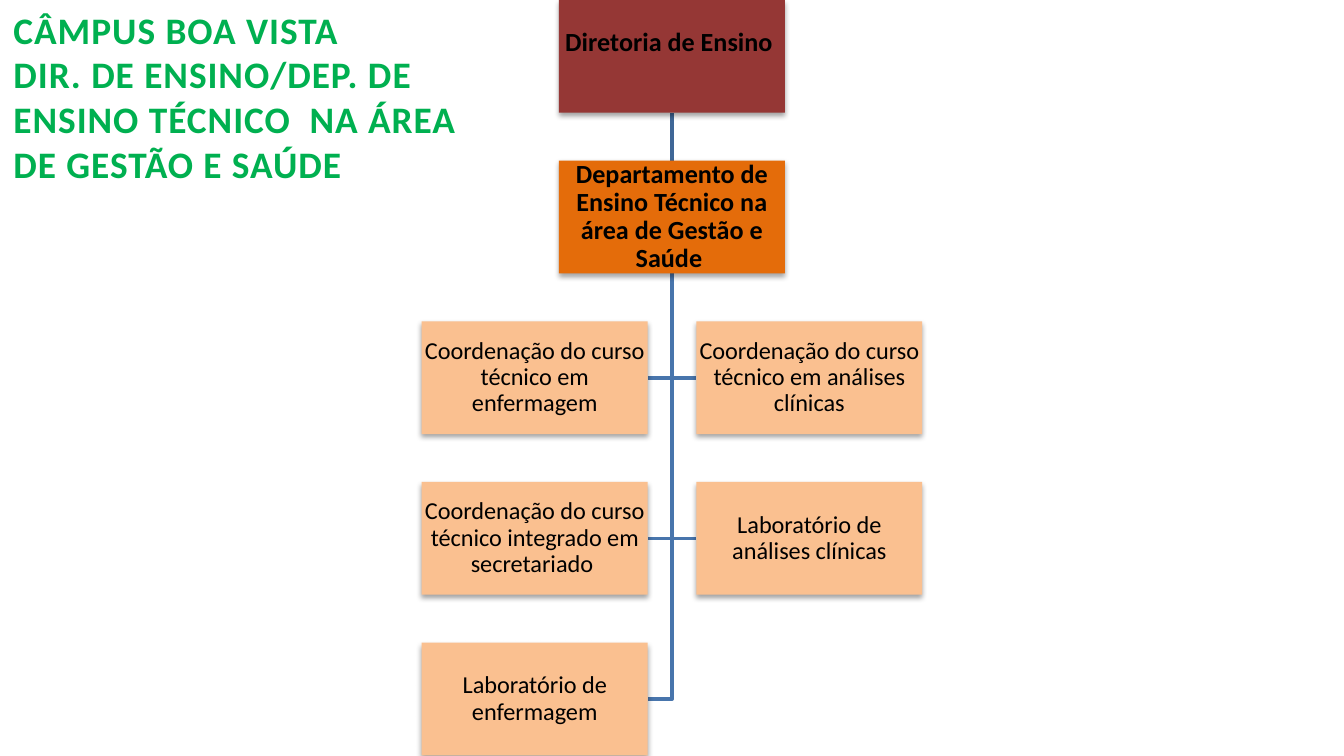
import pptx
import pptx.dml.color
import pptx.enum.shapes
import pptx.enum.text
import pptx.oxml
import pptx.oxml.ns
import pptx.util
from pptx.util import Cm

COLORS = {
    "heading": "00B050",
    "board": "953735",
    "department": "E46C0A",
    "unit": "FAC090",
    "text": "000000",
    "top_link": "3F6797",
    "link": "4875AC",
}
BOX_WIDTH, BOX_HEIGHT = 4.27, 2.13
ROW_STEP = 3.035
CENTER = 12.7
SIDE_GAP = 0.46


def rgb(name):
    return pptx.dml.color.RGBColor.from_string(COLORS[name])


def add_box(label, left, row, fill, size, bold):
    box = slide.shapes.add_shape(
        pptx.enum.shapes.MSO_SHAPE.RECTANGLE,
        Cm(left), Cm(row * ROW_STEP), Cm(BOX_WIDTH), Cm(BOX_HEIGHT))
    box.fill.solid()
    box.fill.fore_color.rgb = rgb(fill)
    box.line.fill.background()
    box.shadow.inherit = False
    effects = box._element.spPr.find(pptx.oxml.ns.qn("a:effectLst"))
    effects.append(pptx.oxml.parse_xml(
        f'<a:outerShdw {pptx.oxml.ns.nsdecls("a")} blurRad="39370" dist="21590" '
        'dir="5400000" rotWithShape="0"><a:srgbClr val="000000">'
        '<a:alpha val="37000"/></a:srgbClr></a:outerShdw>'))
    frame = box.text_frame
    frame.word_wrap = True
    frame.vertical_anchor = pptx.enum.text.MSO_ANCHOR.MIDDLE
    frame.margin_left = frame.margin_right = Cm(0.03)
    frame.margin_top = frame.margin_bottom = Cm(0.03)
    frame.text = label
    paragraph = frame.paragraphs[0]
    paragraph.alignment = pptx.enum.text.PP_ALIGN.CENTER
    paragraph.line_spacing = 0.9
    font = paragraph.runs[0].font
    font.name = "Calibri"
    font.size = pptx.util.Pt(size)
    font.bold = bold
    font.color.rgb = rgb("text")
    return box


deck = pptx.Presentation()
deck.slide_width, deck.slide_height = Cm(25.4), Cm(14.28)
slide = deck.slides.add_slide(deck.slide_layouts[5])

# Heading
heading = slide.shapes.title
heading.left, heading.top, heading.width, heading.height = Cm(0), Cm(0), Cm(9.5), Cm(3.68)
heading.text_frame.text = (
    "CÂMPUS BOA VISTA\n"
    "DIR. DE ENSINO/DEP. DE ENSINO TÉCNICO  NA ÁREA DE GESTÃO E SAÚDE")
heading.text_frame.word_wrap = True
heading.text_frame.auto_size = pptx.enum.text.MSO_AUTO_SIZE.NONE
heading.text_frame.vertical_anchor = pptx.enum.text.MSO_ANCHOR.TOP
for paragraph in heading.text_frame.paragraphs:
    paragraph.alignment = pptx.enum.text.PP_ALIGN.LEFT
    font = paragraph.runs[0].font
    font.name = "Calibri"
    font.size = pptx.util.Pt(20)
    font.bold = True
    font.color.rgb = rgb("heading")
    paragraph.runs[0]._r.get_or_add_rPr().set("spc", "50")

# Units below the department: label, row, side (-1 left, 1 right)
units = [
    ("Coordenação do curso técnico em enfermagem", 2, -1),
    ("Coordenação do curso técnico em análises clínicas", 2, 1),
    ("Coordenação do curso técnico integrado em secretariado ", 3, -1),
    ("Laboratório de análises clínicas", 3, 1),
    ("Laboratório de enfermagem", 4, -1),
]

# Links, drawn behind the boxes
department_bottom = ROW_STEP + BOX_HEIGHT
for label, row, side in reversed(units):
    middle = Cm(row * ROW_STEP + BOX_HEIGHT / 2)
    route = slide.shapes.build_freeform(Cm(CENTER), Cm(department_bottom))
    route.add_line_segments(
        [(Cm(CENTER), middle), (Cm(CENTER + side * SIDE_GAP), middle)], close=False)
    link = route.convert_to_shape()
    link.fill.background()
    link.line.color.rgb = rgb("link")
    link.line.width = pptx.util.Pt(2)
    link.shadow.inherit = False

top_link = slide.shapes.add_connector(
    pptx.enum.shapes.MSO_CONNECTOR.STRAIGHT,
    Cm(CENTER), Cm(BOX_HEIGHT), Cm(CENTER), Cm(ROW_STEP))
top_link.line.color.rgb = rgb("top_link")
top_link.line.width = pptx.util.Pt(2)
top_link._element.spPr.append(pptx.oxml.parse_xml(
    f'<a:effectLst {pptx.oxml.ns.nsdecls("a")}/>'))

# Boxes
center_left = CENTER - BOX_WIDTH / 2
board = add_box("Diretoria de Ensino ", center_left, 0, "board", 14, True)
board.text_frame.margin_bottom = Cm(0.53)
add_box("Departamento de Ensino Técnico na área de Gestão e Saúde ",
        center_left, 1, "department", 14, True)
for label, row, side in units:
    left = CENTER + SIDE_GAP if side > 0 else CENTER - SIDE_GAP - BOX_WIDTH
    add_box(label, left, row, "unit", 13, False)

deck.save("out.pptx")
